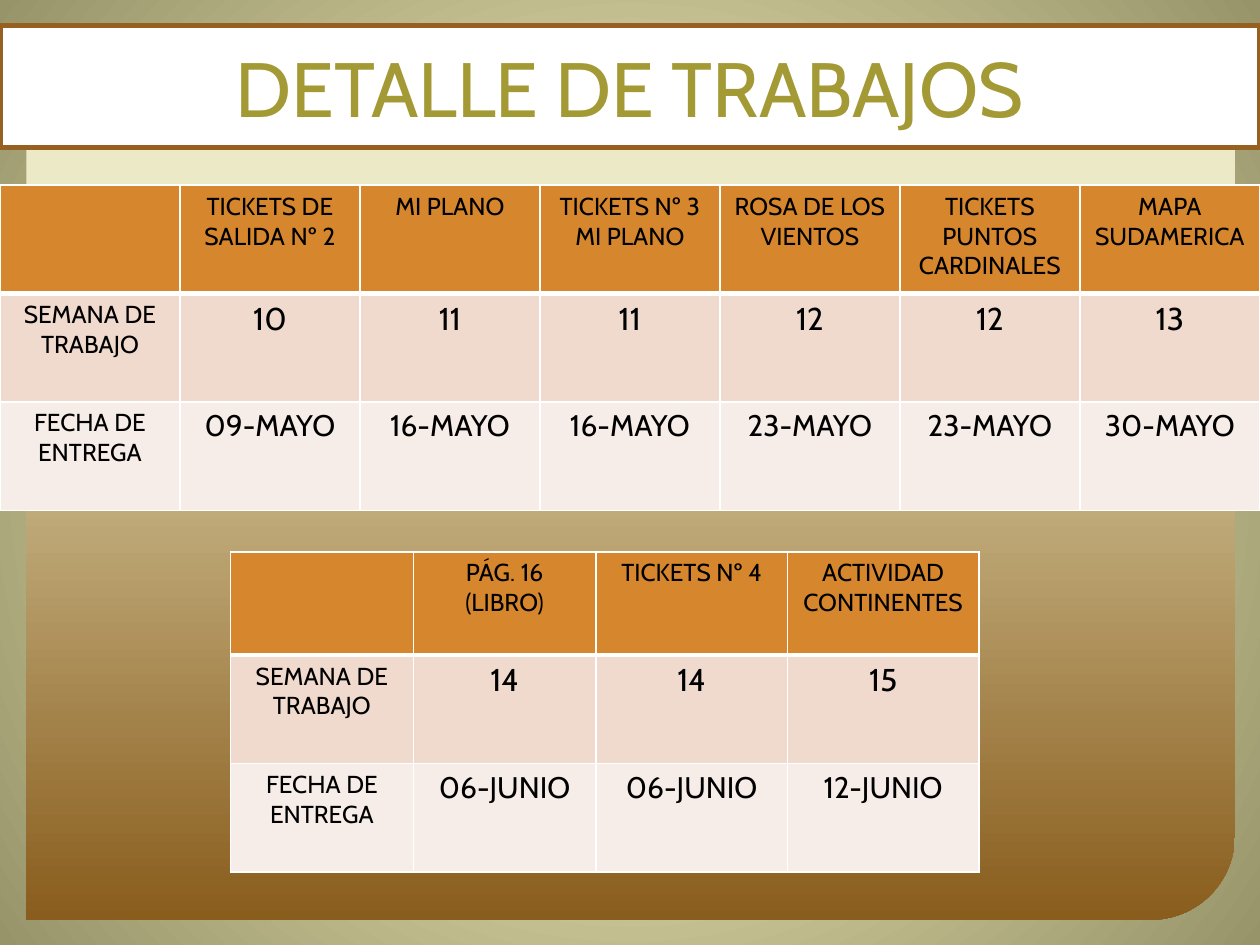
from lxml import etree
from pptx import Presentation
from pptx.dml.color import RGBColor
from pptx.enum.shapes import MSO_SHAPE as SHAPE
from pptx.enum.text import MSO_ANCHOR as ANCHOR, PP_ALIGN as ALIGN
from pptx.oxml.ns import qn
from pptx.util import Inches, Pt

COLORS = {
    "bg_in": "FFFAC4", "bg_out": "97946A",
    "panel_top": "ECE9C6", "panel_bottom": "895D1D",
    "white": "FFFFFF", "frame": "975F20", "title": "A39A36", "text": "000000",
    "header": "D6862D", "week": "F0D9CD", "date": "F7EDE8",
}
FONT = "Cabin"
ROW_STYLES = [("header", 14), ("week", 18), ("date", 17)]
LABEL_SIZE = 14


def rgb(name):
    return RGBColor.from_string(COLORS[name])


class SlideBuilder:
    """Hold the current slide and draw its elements in one style."""

    def __init__(self, slide):
        self.s = slide

    def gradient(self, fill, stops):
        fill.gradient()
        for stop, (position, color) in zip(fill.gradient_stops, stops):
            stop.position = position
            stop.color.rgb = rgb(color)

    def background(self, inner, outer):
        self.gradient(self.s.background.fill, [(0, inner), (1, outer)])
        lin = next(self.s.element.iter(qn("a:lin")))
        circle = etree.Element(qn("a:path"), {"path": "circle"})
        etree.SubElement(circle, qn("a:fillToRect"), dict.fromkeys("ltrb", "50000"))
        lin.getparent().replace(lin, circle)

    def shape(self, kind, x, y, w, h):
        sp = self.s.shapes.add_shape(kind, Inches(x), Inches(y), Inches(w), Inches(h))
        sp.shadow.inherit = False
        return sp

    def panel(self, x, y, w, h):
        sp = self.shape(SHAPE.ROUND_2_DIAG_RECTANGLE, x, y, w, h)
        sp.adjustments[0], sp.adjustments[1] = 0.094, 0
        self.gradient(sp.fill, [(0.17, "panel_top"), (1, "panel_bottom")])
        sp.fill.gradient_angle = 270
        sp.line.fill.background()

    def label(self, tf, text, size, color):
        tf.text = text
        for p in tf.paragraphs:
            p.alignment = ALIGN.CENTER
            p.font.name = FONT
            p.font.size = Pt(size)
            p.font.color.rgb = rgb(color)

    def title(self, text, x, y, w, h):
        sp = self.shape(SHAPE.RECTANGLE, x, y, w, h)
        sp.fill.solid()
        sp.fill.fore_color.rgb = rgb("white")
        sp.line.color.rgb = rgb("frame")
        sp.line.width = Pt(3)
        sp.text_frame.vertical_anchor = ANCHOR.MIDDLE
        self.label(sp.text_frame, text, 44, "title")

    def borders(self, cell, bottom):
        props = cell._tc.get_or_add_tcPr()
        for i, (side, width) in enumerate(zip("LRTB", (1, 1, 1, bottom))):
            ln = etree.Element(qn(f"a:ln{side}"), w=str(Pt(width)))
            fill = etree.SubElement(ln, qn("a:solidFill"))
            etree.SubElement(fill, qn("a:srgbClr"), val=COLORS["white"])
            props.insert(i, ln)

    def table(self, x, y, widths, heights, rows):
        frame = self.s.shapes.add_table(
            len(rows), len(widths), Inches(x), Inches(y),
            Inches(sum(widths)), Inches(sum(heights)))
        table = frame.table
        table.first_row = table.horz_banding = False
        for column, width in zip(table.columns, widths):
            column.width = Inches(width)
        for r, (row, height) in enumerate(zip(rows, heights)):
            table.rows[r].height = Inches(height)
            color, size = ROW_STYLES[r]
            for c, text in enumerate(row):
                cell = table.cell(r, c)
                cell.fill.solid()
                cell.fill.fore_color.rgb = rgb(color)
                self.borders(cell, 3 if r == 0 else 1)
                self.label(cell.text_frame, text, size if c else LABEL_SIZE, "text")


def main():
    prs = Presentation()
    prs.slide_width, prs.slide_height = Inches(10), Inches(7.5)
    b = SlideBuilder(prs.slides.add_slide(prs.slide_layouts[6]))
    b.background("bg_in", "bg_out")
    b.panel(0.21, 0.21, 9.59, 7.09)
    b.table(0, 1.47, [10 / 7] * 7, [0.86] * 3, [
        ["", "TICKETS DE SALIDA Nº 2", "MI PLANO", "TICKETS Nº 3 MI PLANO",
         "ROSA DE LOS VIENTOS", "TICKETS PUNTOS CARDINALES", "MAPA SUDAMERICA"],
        ["SEMANA DE TRABAJO", "10", "11", "11", "12", "12", "13"],
        ["FECHA DE ENTREGA", "09-MAYO", "16-MAYO", "16-MAYO",
         "23-MAYO", "23-MAYO", "30-MAYO"],
    ])
    b.title("DETALLE DE TRABAJOS", 0, 0.2, 10, 0.97)
    b.table(1.83, 4.38, [1.45, 1.45, 1.52, 1.52], [0.82, 0.86, 0.86], [
        ["", "PÁG. 16\n(LIBRO)", "TICKETS Nº 4", "ACTIVIDAD\nCONTINENTES"],
        ["SEMANA DE TRABAJO", "14", "14", "15"],
        ["FECHA DE ENTREGA", "06-JUNIO", "06-JUNIO", "12-JUNIO"],
    ])
    prs.save("out.pptx")


if __name__ == "__main__":
    main()
